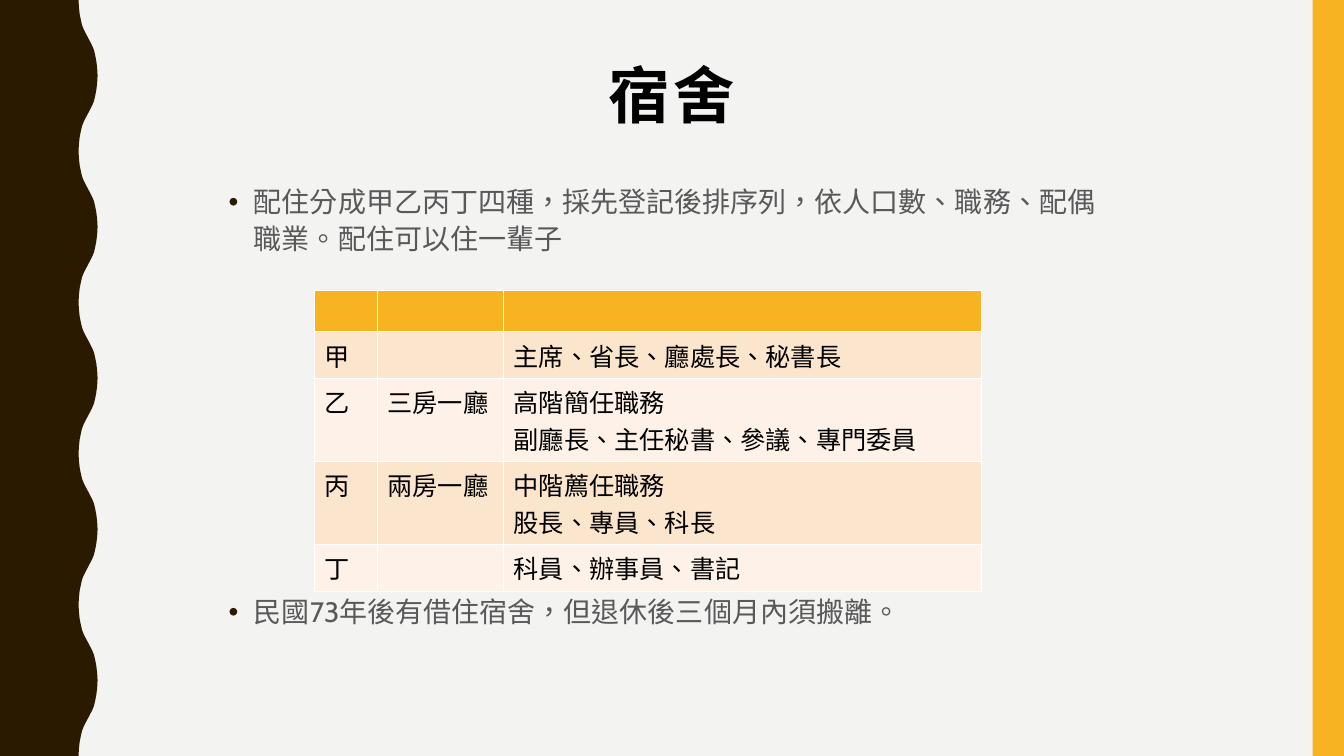
from dataclasses import dataclass

from lxml.etree import SubElement
from pptx import Presentation
from pptx.dml.color import RGBColor
from pptx.enum.shapes import MSO_SHAPE
from pptx.enum.text import MSO_ANCHOR, PP_ALIGN
from pptx.oxml.ns import qn
from pptx.util import Cm, Pt


@dataclass(frozen=True)
class Theme:
    font: str = "Cabin"
    language: str = "zh-TW"
    background: str = "F3F3F2"
    wave: str = "2A1A00"
    accent: str = "F8B323"
    title: str = "000000"
    body: str = "595959"
    cell: str = "000000"
    border: str = "FFFFFF"
    bands: tuple[str, str] = ("FCE5CD", "FEF2E8")
    title_size: int = 44
    body_size: int = 20
    cell_size: int = 18


@dataclass(frozen=True)
class Box:
    left: float
    top: float
    width: float
    height: float

    def lengths(self) -> tuple:
        return Cm(self.left), Cm(self.top), Cm(self.width), Cm(self.height)


@dataclass(frozen=True)
class Bullet:
    text: str
    space_before: float


@dataclass(frozen=True)
class DormitoryClass:
    grade: str
    rooms: str
    residents: str
    height: float


THEME = Theme()
SLIDE_WIDTH, SLIDE_HEIGHT = 33.87, 19.05
WAVE_COUNT, WAVE_DEPTH, WAVE_LEFT = 5, 0.48, 1.98
# Distance down and offset right over the first quarter of one wave.
WAVE_QUARTER = [(0, 0), (0.18, 0.01), (0.36, 0.03), (0.51, 0.06),
                (0.64, 0.09), (0.74, 0.13), (0.84, 0.18), (0.95, 0.24)]
SIDE_BAR = Box(33.08, 0, 0.79, SLIDE_HEIGHT)
TITLE_BOX = Box(7.26, 1.52, 19.35, 3.35)
BODY_BOX = Box(5.51, 4.45, 22.86, 13.49)
BULLET_INDENT = Cm(0.64)
BULLETS = [
    Bullet("配住分成甲乙丙丁四種，採先登記後排序列，依人口數、職務、配偶職業。配住可以住一輩子", 0),
    Bullet("民國73年後有借住宿舍，但退休後三個月內須搬離。", 240),
]
TABLE_LEFT, TABLE_TOP = 7.93, 7.32
HEADER_HEIGHT, ONE_LINE_HEIGHT, TWO_LINE_HEIGHT = 1.04, 1.18, 2.09
COLUMN_WIDTHS = (1.58, 3.18, 12.04)
DORMITORY_CLASSES = [
    DormitoryClass("", "", "", HEADER_HEIGHT),
    DormitoryClass("甲", "", "主席、省長、廳處長、秘書長", ONE_LINE_HEIGHT),
    DormitoryClass("乙", "三房一廳", "高階簡任職務\n副廳長、主任秘書、參議、專門委員", TWO_LINE_HEIGHT),
    DormitoryClass("丙", "兩房一廳", "中階薦任職務\n股長、專員、科長", TWO_LINE_HEIGHT),
    DormitoryClass("丁", "", "科員、辦事員、書記", ONE_LINE_HEIGHT),
]


def style_run(run, size: int, color: str, bold: bool = False) -> None:
    formats = {"name": THEME.font, "size": Pt(size), "bold": bold}
    for name, value in formats.items():
        setattr(run.font, name, value)
    run.font.color.rgb = RGBColor.from_string(color)
    run._r.get_or_add_rPr().set("lang", THEME.language)


def paint(shape, color: str) -> None:
    shape.shadow.inherit = False
    shape.fill.solid()
    shape.fill.fore_color.rgb = RGBColor.from_string(color)
    shape.line.fill.background()


def wave_points() -> list[tuple[int, int]]:
    """Points down the wavy edge, each wave mirrored from its first quarter."""
    period = SLIDE_HEIGHT / WAVE_COUNT
    second_quarter = [(period / 2 - down, WAVE_DEPTH - right)
                      for down, right in reversed(WAVE_QUARTER[:-1])]
    rising = WAVE_QUARTER + second_quarter
    falling = [(period - down, right) for down, right in reversed(rising[:-1])]
    return [(Cm(WAVE_LEFT + right), Cm(wave * period + down))
            for wave in range(WAVE_COUNT) for down, right in rising + falling]


def draw_wave(slide) -> None:
    builder = slide.shapes.build_freeform(0, 0)
    builder.add_line_segments(wave_points() + [(0, Cm(SLIDE_HEIGHT))], close=True)
    paint(builder.convert_to_shape(), THEME.wave)


def add_text_frame(slide, box: Box):
    frame = slide.shapes.add_textbox(*box.lengths()).text_frame
    frame.word_wrap = True
    frame.vertical_anchor = MSO_ANCHOR.TOP
    return frame


def draw_title(slide, text: str) -> None:
    paragraph = add_text_frame(slide, TITLE_BOX).paragraphs[0]
    paragraph.alignment = PP_ALIGN.CENTER
    paragraph.line_spacing = 0.9
    run = paragraph.add_run()
    run.text = text
    style_run(run, THEME.title_size, THEME.title, bold=True)
    run._r.get_or_add_rPr().set("spc", "200")


def add_bullet_mark(paragraph) -> None:
    properties = paragraph._p.get_or_add_pPr()
    properties.set("marL", str(BULLET_INDENT))
    properties.set("indent", str(-BULLET_INDENT))
    color = SubElement(properties, qn("a:buClr"))
    SubElement(color, qn("a:srgbClr"), val=THEME.wave)
    SubElement(properties, qn("a:buFont"), typeface="Arial")
    SubElement(properties, qn("a:buChar"), char="•")


def draw_bullets(slide) -> None:
    frame = add_text_frame(slide, BODY_BOX)
    for index, bullet in enumerate(BULLETS):
        paragraph = frame.add_paragraph() if index else frame.paragraphs[0]
        add_bullet_mark(paragraph)
        paragraph.line_spacing = 1.1
        paragraph.space_before = Pt(bullet.space_before)
        run = paragraph.add_run()
        run.text = bullet.text
        style_run(run, THEME.body_size, THEME.body)


def add_borders(cell) -> None:
    properties = cell._tc.get_or_add_tcPr()
    for position, side in enumerate(("a:lnL", "a:lnR", "a:lnT", "a:lnB")):
        line = properties.makeelement(qn(side), {"w": str(Pt(1))})
        fill = SubElement(line, qn("a:solidFill"))
        SubElement(fill, qn("a:srgbClr"), val=THEME.border)
        properties.insert(position, line)


def fill_cell(cell, text: str, color: str) -> None:
    cell.fill.solid()
    cell.fill.fore_color.rgb = RGBColor.from_string(color)
    add_borders(cell)
    cell.text = text
    for paragraph in cell.text_frame.paragraphs:
        for run in paragraph.runs:
            style_run(run, THEME.cell_size, THEME.cell)


def draw_table(slide) -> None:
    height = sum(entry.height for entry in DORMITORY_CLASSES)
    box = Box(TABLE_LEFT, TABLE_TOP, sum(COLUMN_WIDTHS), height)
    table = slide.shapes.add_table(
        len(DORMITORY_CLASSES), len(COLUMN_WIDTHS), *box.lengths()).table
    for column, width in zip(table.columns, COLUMN_WIDTHS):
        column.width = Cm(width)
    for index, (row, entry) in enumerate(zip(table.rows, DORMITORY_CLASSES)):
        row.height = Cm(entry.height)
        color = THEME.bands[(index - 1) % 2] if index else THEME.accent
        for cell, text in zip(row.cells, (entry.grade, entry.rooms, entry.residents)):
            fill_cell(cell, text, color)


def main() -> None:
    presentation = Presentation()
    presentation.slide_width = Cm(SLIDE_WIDTH)
    presentation.slide_height = Cm(SLIDE_HEIGHT)
    slide = presentation.slides.add_slide(presentation.slide_layouts[6])
    slide.background.fill.solid()
    slide.background.fill.fore_color.rgb = RGBColor.from_string(THEME.background)
    draw_wave(slide)
    paint(slide.shapes.add_shape(MSO_SHAPE.RECTANGLE, *SIDE_BAR.lengths()), THEME.accent)
    draw_title(slide, "宿舍")
    draw_bullets(slide)
    draw_table(slide)
    presentation.save("out.pptx")


if __name__ == "__main__":
    main()
